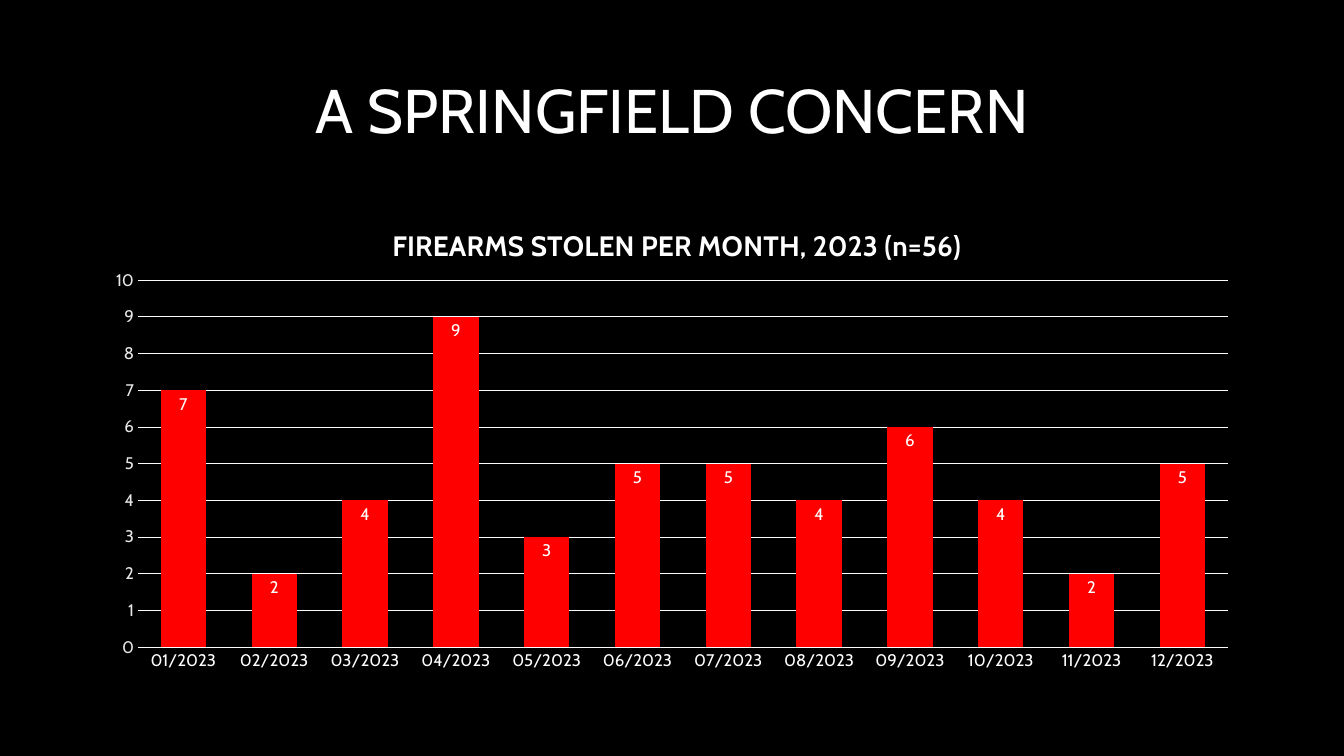
from lxml.etree import SubElement
from pptx import Presentation
from pptx.chart.data import CategoryChartData
from pptx.dml.color import RGBColor
from pptx.enum.chart import XL_CHART_TYPE, XL_LABEL_POSITION, XL_TICK_MARK
from pptx.enum.text import MSO_ANCHOR, PP_ALIGN
from pptx.oxml.ns import qn
from pptx.util import Pt

EMU_PER_PX = 9144  # 100 px to the inch
BLACK = RGBColor(0x00, 0x00, 0x00)
WHITE = RGBColor(0xFF, 0xFF, 0xFF)
GRID_WHITE = RGBColor(0xFC, 0xFC, 0xFC)
LIGHT_GREY = RGBColor(0xE8, 0xE8, 0xE8)
RED = RGBColor(0xFF, 0x00, 0x00)

THEFTS_PER_MONTH = [7, 2, 4, 9, 3, 5, 5, 4, 6, 4, 2, 5]


def px(length):
    return length * EMU_PER_PX


def place(element, position, **values):
    """Give a chart part a manual layout, as fractions of the chart."""
    for old_layout in element.findall(qn("c:layout")):
        element.remove(old_layout)
    layout = SubElement(element, qn("c:layout"))
    element.insert(position, layout)
    manual = SubElement(layout, qn("c:manualLayout"))
    for name, value in values.items():
        SubElement(manual, qn(f"c:{name}")).set("val", str(value))


class SlideBuilder:
    font_name = "Cabin"

    def __init__(self, presentation):
        self.slide = presentation.slides.add_slide(presentation.slide_layouts[5])
        fill = self.slide.background.fill
        fill.solid()
        fill.fore_color.rgb = BLACK

    def style_font(self, font, size, color=WHITE, bold=False):
        font.name = self.font_name
        font.size = Pt(size)
        font.bold = bold
        font.color.rgb = color

    def style_line(self, line):
        line.color.rgb = GRID_WHITE
        line.width = Pt(0.75)

    def add_title(self, text, left, top, width, height):
        title = self.slide.shapes.title
        title.left, title.top = px(left), px(top)
        title.width, title.height = px(width), px(height)
        frame = title.text_frame
        frame.text = text
        frame.word_wrap = True
        frame.vertical_anchor = MSO_ANCHOR.MIDDLE
        paragraph = frame.paragraphs[0]
        paragraph.alignment = PP_ALIGN.CENTER
        paragraph.line_spacing = 0.9
        self.style_font(paragraph.runs[0].font, 44)

    def add_column_chart(self, heading, categories, values, left, top, width, height):
        data = CategoryChartData()
        data.categories = categories
        data.add_series("Series 1", values)
        chart = self.slide.shapes.add_chart(
            XL_CHART_TYPE.COLUMN_CLUSTERED,
            px(left), px(top), px(width), px(height), data).chart
        self.style_font(chart.font, 10)
        chart.has_legend = False
        self.style_heading(chart, heading)
        self.style_axes(chart)
        self.style_columns(chart.plots[0])
        plot_area = chart.plots[0]._element.getparent()
        place(plot_area, 0, layoutTarget="inner", xMode="edge", yMode="edge",
              x=0.039, y=0.164, w=0.94, h=0.765)

    def style_heading(self, chart, heading):
        chart.has_title = True
        title = chart.chart_title
        title.include_in_layout = False
        title.text_frame.text = heading
        self.style_font(title.text_frame.paragraphs[0].runs[0].font, 20, bold=True)
        place(title._element, 1, xMode="edge", yMode="edge", x=0.254, y=0.04)

    def style_axes(self, chart):
        month_axis, count_axis = chart.category_axis, chart.value_axis
        for axis, color in ((month_axis, WHITE), (count_axis, LIGHT_GREY)):
            axis.major_tick_mark = XL_TICK_MARK.NONE
            axis.minor_tick_mark = XL_TICK_MARK.NONE
            self.style_font(axis.tick_labels.font, 12, color)
        self.style_line(month_axis.format.line)
        count_axis.format.line.fill.background()
        count_axis.minimum_scale, count_axis.maximum_scale = 0, 10
        count_axis.major_unit = 1
        count_axis.has_major_gridlines = True
        self.style_line(count_axis.major_gridlines.format.line)

    def style_columns(self, plot):
        plot.gap_width = 100
        plot.overlap = -24
        plot.vary_by_categories = False
        series = plot.series[0]
        series.format.fill.solid()
        series.format.fill.fore_color.rgb = RED
        labels = series.data_labels
        labels.show_value = True
        labels.position = XL_LABEL_POSITION.INSIDE_END
        self.style_font(labels.font, 12)


def main():
    presentation = Presentation()
    presentation.slide_width, presentation.slide_height = px(1333), px(750)
    builder = SlideBuilder(presentation)

    # Title
    builder.add_title("A SPRINGFIELD CONCERN", 92, 40, 1150, 145)

    # Monthly thefts
    months = [f"{month:02}/2023" for month in range(1, 13)]
    builder.add_column_chart("FIREARMS STOLEN PER MONTH, 2023 (n=56)",
                             months, THEFTS_PER_MONTH, 92, 200, 1150, 476)

    presentation.save("out.pptx")


if __name__ == "__main__":
    main()
